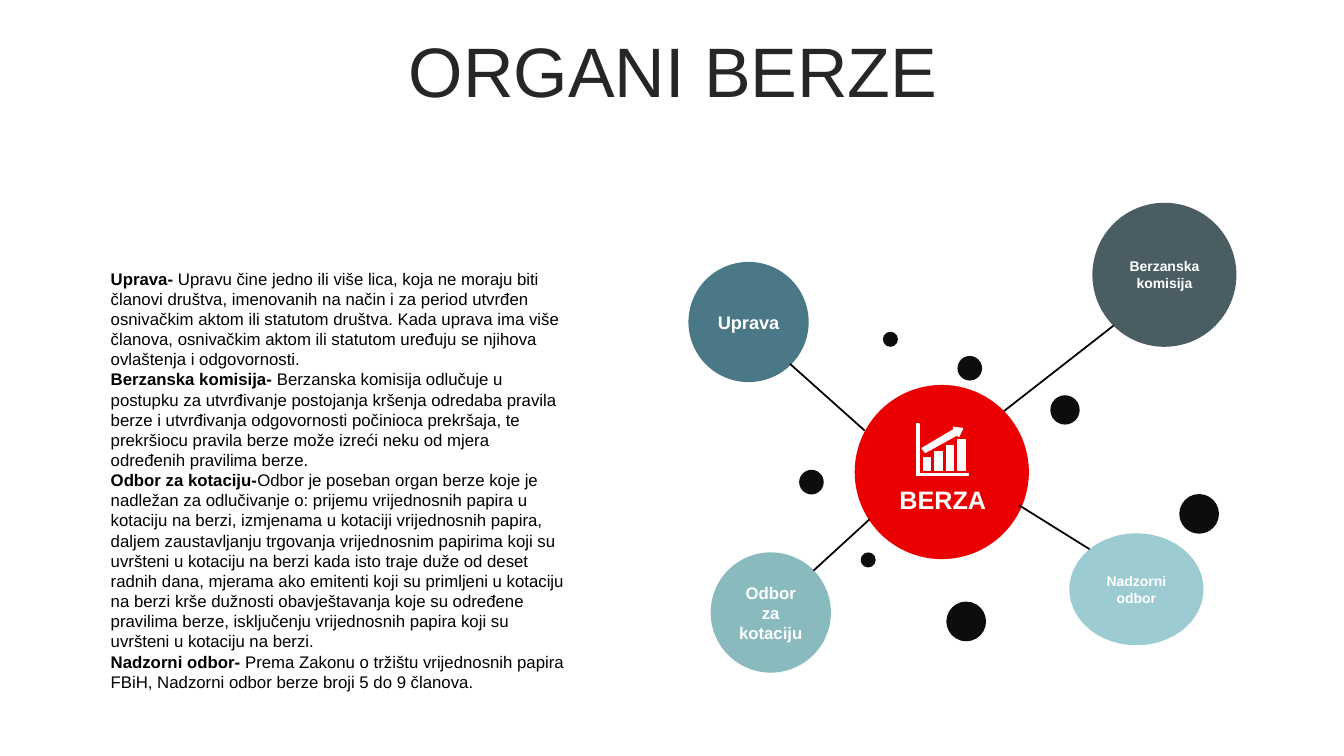
from lxml.etree import SubElement as sub
from pptx import Presentation
from pptx.dml.color import RGBColor as RGB
from pptx.enum.shapes import MSO_CONNECTOR as LINK, MSO_SHAPE as SHAPE
from pptx.enum.text import MSO_ANCHOR as ANCHOR, MSO_AUTO_SIZE as FIT, PP_ALIGN as ALIGN
from pptx.oxml.ns import qn
from pptx.util import Cm, Pt

COLORS = {
    "title": "262626", "black": "000000", "white": "FFFFFF", "dot": "0D0D0D",
    "hub": "EA0000", "slate": "4A5D62", "sky": "9CCCD2", "blue": "4A7886", "teal": "88BABE",
}

DUTIES = [
    ("Uprava- ", "Upravu čine jedno ili više lica, koja ne moraju biti članovi društva, imenovanih na način i za period utvrđen osnivačkim aktom ili statutom društva. Kada uprava ima više članova, osnivačkim aktom ili statutom uređuju se njihova ovlaštenja i odgovornosti."),
    ("Berzanska komisija- ", "Berzanska komisija odlučuje u postupku za utvrđivanje postojanja kršenja odredaba pravila berze i utvrđivanja odgovornosti počinioca prekršaja, te prekršiocu pravila berze može izreći neku od mjera određenih pravilima berze."),
    ("Odbor za kotaciju-", "Odbor je poseban organ berze koje je nadležan za odlučivanje o: prijemu vrijednosnih papira u kotaciju na berzi, izmjenama u kotaciji vrijednosnih papira, daljem zaustavljanju trgovanja vrijednosnim papirima koji su uvršteni u kotaciju na berzi kada isto traje duže od deset radnih dana, mjerama ako emitenti koji su primljeni u kotaciju na berzi krše dužnosti obavještavanja koje su određene pravilima berze, isključenju vrijednosnih papira koji su uvršteni u kotaciju na berzi."),
    ("Nadzorni odbor- ", "Prema Zakonu o tržištu vrijednosnih papira FBiH, Nadzorni odbor berze broji 5 do 9 članova."),
]

# Text, left, top, width, height, colour, text size
ORGANS = [
    ("Berzanska komisija", 27.53, 5.11, 3.63, 3.63, "slate", 10),
    ("Nadzorni odbor", 26.95, 13.44, 3.38, 2.82, "sky", 10),
    ("Uprava", 17.35, 6.6, 3.03, 3.03, "blue", 13),
    ("Odbor za kotaciju", 17.91, 13.92, 3.03, 3.03, "teal", 12),
]

SPOKES = [
    (19.91, 9.17, 21.79, 10.85),
    (20.5, 14.38, 21.92, 13.08),
    (25.3, 10.36, 28.07, 8.2),
    (25.68, 12.73, 27.46, 13.84),
]

# Left, top, diameter
DOTS = [
    (23.85, 15.16, 1), (29.72, 12.45, 1), (26.47, 9.96, 0.74), (20.14, 11.84, 0.62),
    (24.13, 8.97, 0.62), (22.25, 8.36, 0.38), (21.69, 13.92, 0.38),
]

# Chart icon, in hundredths of a centimetre
ARROW = [(2403, 1077), (2426, 1080), (2416, 1100), (2413, 1095),
         (2332, 1140), (2324, 1130), (2405, 1082)]
AXES = [(2309, 1069), (2316, 1069), (2316, 1194), (2441, 1194), (2441, 1199), (2309, 1199)]


def color(name):
    return RGB.from_string(COLORS[name])


def write(para, text, size=12, tint="white", bold=False, align=None):
    """Add a run to a paragraph."""
    run = para.add_run()
    run.text = text
    font = run.font
    font.name, font.size, font.bold = "Arial", Pt(size), bold
    font.color.rgb = color(tint)
    if align is not None:
        para.alignment = align


def place(shape, left, top, width, height):
    shape.left, shape.top = Cm(left), Cm(top)
    shape.width, shape.height = Cm(width), Cm(height)


def add_title(slide, text):
    title = slide.shapes.title
    place(title, 0.89, 0.94, 32.16, 2.01)
    frame = title.text_frame
    frame.auto_size, frame.vertical_anchor = FIT.NONE, ANCHOR.MIDDLE
    para = frame.paragraphs[0]
    para.line_spacing, para.space_before = 0.8, Pt(10)
    write(para, text, size=50, tint="title", align=ALIGN.CENTER)


def add_duties(slide):
    body = slide.placeholders[1]
    place(body, 2.59, 6.63, 11.94, 11.02)
    frame = body.text_frame
    frame.auto_size, frame.vertical_anchor = FIT.NONE, ANCHOR.TOP
    frame.margin_left = frame.margin_right = Cm(0.2)
    frame.margin_top = frame.margin_bottom = Cm(0.13)
    for i, (name, duty) in enumerate(DUTIES):
        para = frame.add_paragraph() if i else frame.paragraphs[0]
        para.space_before = Pt(0)
        props = para._p.get_or_add_pPr()
        props.set("marL", "0")
        props.set("indent", "0")
        sub(props, qn("a:buNone"))
        write(para, name, tint="black", bold=True)
        write(para, duty, tint="black")


def add_disc(slide, left, top, width, height, tint):
    disc = slide.shapes.add_shape(SHAPE.OVAL, Cm(left), Cm(top), Cm(width), Cm(height))
    disc.shadow.inherit = False
    disc.fill.solid()
    disc.fill.fore_color.rgb = color(tint)
    disc.line.fill.background()
    return disc


def add_organ(slide, text, left, top, width, height, tint, size):
    frame = add_disc(slide, left, top, width, height, tint).text_frame
    frame.word_wrap, frame.vertical_anchor = True, ANCHOR.MIDDLE
    write(frame.paragraphs[0], text, size=size, bold=True, align=ALIGN.CENTER)


def add_spoke(slide, *ends):
    spoke = slide.shapes.add_connector(LINK.STRAIGHT, *map(Cm, ends))
    spoke.line.color.rgb = color("black")
    spoke.line.width = Pt(1.25)
    sub(spoke._element.spPr, qn("a:effectLst"))


def add_label(slide, text, left, top, width, height):
    box = slide.shapes.add_textbox(Cm(left), Cm(top), Cm(width), Cm(height))
    box.text_frame.word_wrap = True
    write(box.text_frame.paragraphs[0], text, size=18, bold=True, align=ALIGN.CENTER)


def add_icon(slide):
    """Draw the rising bar chart as one outline."""
    parts = [AXES, ARROW]
    for i in range(4):
        left, top = 2327 + 29 * i, 1153 - 15 * i
        parts.append([(left, top), (left + 18, top), (left + 18, 1186), (left, 1186)])
    pen = slide.shapes.build_freeform(*AXES[0], scale=Cm(0.01))
    for i, part in enumerate(parts):
        if i:
            pen.move_to(*part[0])
        pen.add_line_segments(part[1:], close=True)
    icon = pen.convert_to_shape()
    icon.shadow.inherit = False
    icon.fill.solid()
    icon.fill.fore_color.rgb = icon.line.color.rgb = color("white")
    icon.line.width = Pt(1)


def main():
    deck = Presentation()
    deck.slide_width, deck.slide_height = Cm(33.87), Cm(19.05)
    slide = deck.slides.add_slide(deck.slide_layouts[1])
    add_title(slide, "ORGANI BERZE")
    add_duties(slide)
    add_disc(slide, 21.54, 9.7, 4.39, 4.39, "hub")
    for organ in ORGANS:
        add_organ(slide, *organ)
    for ends in SPOKES:
        add_spoke(slide, *ends)
    for left, top, size in DOTS:
        add_disc(slide, left, top, size, size, "dot")
    add_label(slide, "BERZA", 21.59, 12.09, 4.34, 1.02)
    add_icon(slide)
    deck.save("out.pptx")


if __name__ == "__main__":
    main()
